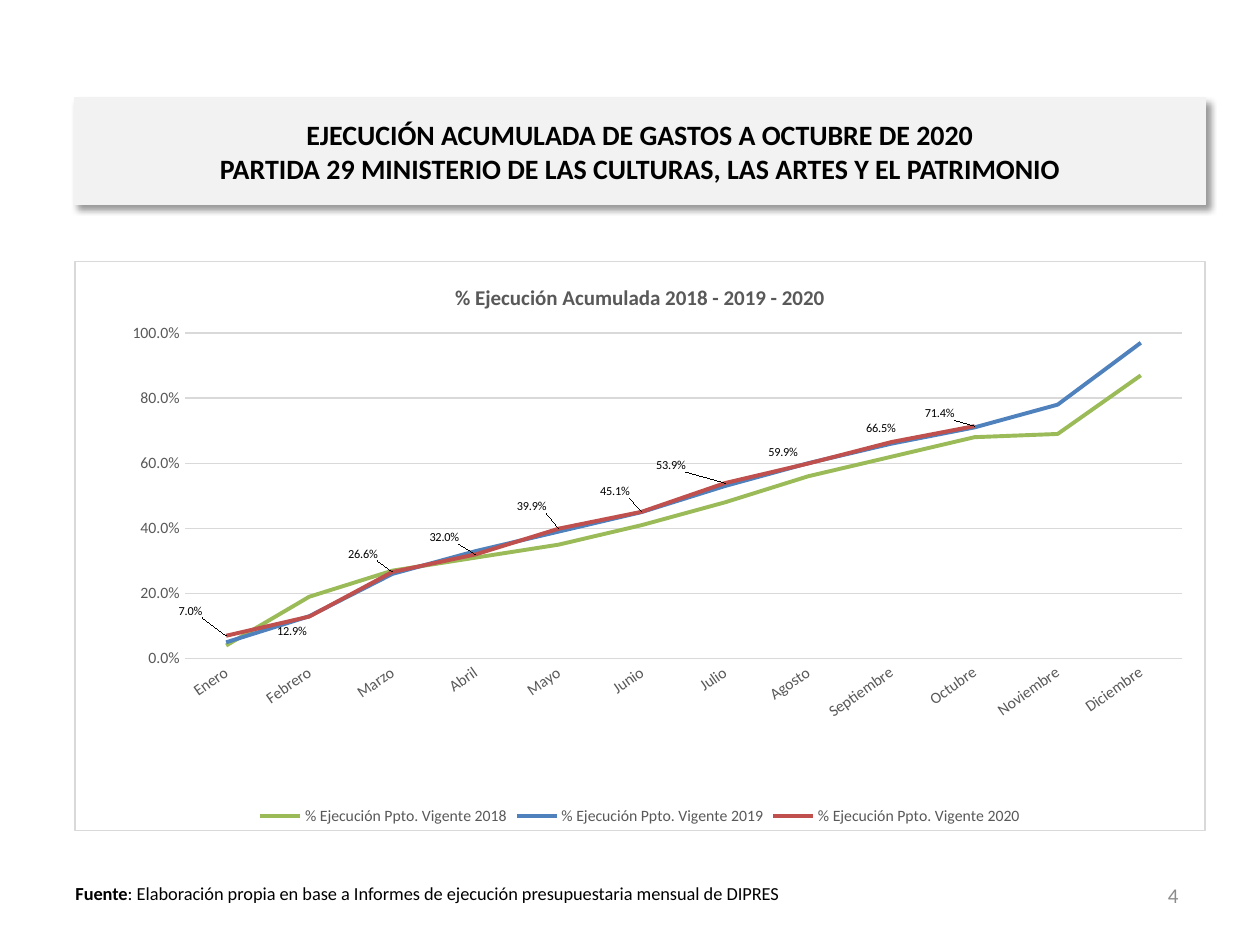
from lxml.etree import SubElement
from pptx import Presentation
from pptx.chart.data import CategoryChartData
from pptx.dml.color import RGBColor
from pptx.enum.chart import XL_CHART_TYPE, XL_LABEL_POSITION, XL_LEGEND_POSITION, XL_TICK_MARK
from pptx.enum.text import MSO_ANCHOR, MSO_AUTO_SIZE, PP_ALIGN
from pptx.oxml import parse_xml
from pptx.oxml.ns import nsdecls, qn
from pptx.util import Pt

TITLE = ("EJECUCIÓN ACUMULADA DE GASTOS A OCTUBRE DE 2020\v"
         "PARTIDA 29 MINISTERIO DE LAS CULTURAS, LAS ARTES Y EL PATRIMONIO")
CHART_TITLE = "% Ejecución Acumulada 2018 - 2019 - 2020"
SOURCE = [("Fuente", True),
          (": Elaboración propia en base a Informes de ejecución presupuestaria mensual de DIPRES", False)]
PAGE = [("4", False)]
MONTHS = ["Enero", "Febrero", "Marzo", "Abril", "Mayo", "Junio", "Julio", "Agosto",
          "Septiembre", "Octubre", "Noviembre", "Diciembre"]
SERIES = [
    ("% Ejecución Ppto. Vigente 2018", "9BBB59",
     [0.04, 0.19, 0.27, 0.31, 0.35, 0.41, 0.48, 0.56, 0.62, 0.68, 0.69, 0.87]),
    ("% Ejecución Ppto. Vigente 2019", "4F81BD",
     [0.05, 0.13, 0.26, 0.33, 0.39, 0.45, 0.53, 0.6, 0.66, 0.71, 0.78, 0.97]),
    ("% Ejecución Ppto. Vigente 2020", "C0504D",
     [0.07, 0.129, 0.266, 0.32, 0.399, 0.451, 0.539, 0.599, 0.665, 0.714, None, None]),
]
LABEL_SHIFTS = [(-20.5, -7.5), (-10, 15), (-17, -3.5), (-18, -3), (-15.5, -6),
                (-15.5, -5), (-31, -3.5), (-14.5, 0.5), (-6, -1), (-20, -0.5)]

THEME = {
    "font": "Calibri",
    "black": "000000", "gray": "595959", "page": "8C8C8C",
    "rule": "D9D9D9", "panel": "F2F2F2", "white": "FFFFFF",
    "title": 16, "chart_title": 12, "source": 10.5, "number": 12,
    "chart": 10, "axis": 9, "label": 7, "line": 2.25,
}
LEFT, WIDTH = 42.5, 646.5
TITLE_BOX = (LEFT, 56, WIDTH, 61)
CHART_BOX = (LEFT, 149, WIDTH, 326)
SOURCE_BOX = (36, 500.5, 425.5, 20)
PAGE_BOX = (512.5, 497, 168, 28.5)
PLOT = {"x": 0.097, "y": 0.126, "w": 0.883, "h": 0.572}


def color(key):
    return RGBColor.from_string(THEME[key])


def style(font, size, ink, bold=None):
    font.name, font.size, font.bold = THEME["font"], Pt(THEME[size]), bold
    font.color.rgb = color(ink)


def add_text(s, box, runs, size, ink, align, anchor):
    tf = s.shapes.add_textbox(*map(Pt, box)).text_frame
    tf.word_wrap = True
    tf.vertical_anchor = anchor
    p = tf.paragraphs[0]
    p.alignment = align
    style(p.font, size, ink)
    for text, bold in runs:
        r = p.add_run()
        r.text, r.font.bold = text, bold


def set_layout(layout, values):
    manual = SubElement(layout, qn("c:manualLayout"))
    for tag, value in values.items():
        SubElement(manual, qn(f"c:{tag}")).set("val", str(value))


def add_title(s):
    sp = s.shapes.title
    sp.left, sp.top, sp.width, sp.height = map(Pt, TITLE_BOX)
    sp.fill.solid()
    sp.fill.fore_color.rgb = color("panel")
    sp.line.color.rgb = color("panel")
    sp.line.width = Pt(0.75)
    sp._element.spPr.append(parse_xml(
        f'<a:effectLst {nsdecls("a")}><a:outerShdw blurRad="{Pt(4)}" dist="{Pt(3)}" '
        'dir="2700000" algn="tl" rotWithShape="0"><a:srgbClr val="000000">'
        '<a:alpha val="40000"/></a:srgbClr></a:outerShdw></a:effectLst>'))
    tf = sp.text_frame
    tf.text = TITLE
    tf.word_wrap = True
    tf.auto_size = MSO_AUTO_SIZE.NONE
    tf.vertical_anchor = MSO_ANCHOR.MIDDLE
    p = tf.paragraphs[0]
    p.alignment = PP_ALIGN.CENTER
    style(p.font, "title", "black", True)


def style_axes(chart):
    cat, val = chart.category_axis, chart.value_axis
    for axis in (cat, val):
        axis.major_tick_mark = axis.minor_tick_mark = XL_TICK_MARK.NONE
        style(axis.tick_labels.font, "axis", "gray")
    cat.format.line.color.rgb = color("rule")
    cat.format.line.width = Pt(1)
    cat._element.find(qn("c:txPr")).find(qn("a:bodyPr")).set("rot", "-2100000")
    val.minimum_scale, val.maximum_scale, val.major_unit = 0, 1, 0.2
    val.tick_labels.number_format = "0.0%"
    val.tick_labels.number_format_is_linked = False
    val.format.line.fill.background()
    val.major_gridlines.format.line.color.rgb = color("rule")
    val.major_gridlines.format.line.width = Pt(0.75)


def add_labels(series):
    labels = series.data_labels
    labels.show_value = True
    labels.number_format = "0.0%"
    labels.number_format_is_linked = False
    labels.position = XL_LABEL_POSITION.ABOVE
    style(labels.font, "label", "black")
    for i in range(len(LABEL_SHIFTS)):
        label = series.points[i].data_label
        style(label.font, "label", "black")
        label.position = XL_LABEL_POSITION.ABOVE
    for node, (dx, dy) in zip(series._element.findall(".//" + qn("c:dLbl")), LABEL_SHIFTS):
        layout = parse_xml(f'<c:layout {nsdecls("c")}/>')
        set_layout(layout, {"x": round(dx / CHART_BOX[2], 4), "y": round(dy / CHART_BOX[3], 4)})
        node.find(qn("c:idx")).addnext(layout)


def add_line_chart(s):
    data = CategoryChartData(number_format="0.0%")
    data.categories = MONTHS
    for name, _, values in SERIES:
        data.add_series(name, values)
    chart = s.shapes.add_chart(XL_CHART_TYPE.LINE, *map(Pt, CHART_BOX), data).chart
    style(chart.font, "chart", "black")
    chart.has_title = True
    p = chart.chart_title.text_frame.paragraphs[0]
    p.text = CHART_TITLE
    style(p.font, "chart_title", "gray", True)
    chart.has_legend = True
    chart.legend.position = XL_LEGEND_POSITION.BOTTOM
    chart.legend.include_in_layout = False
    style(chart.legend.font, "axis", "gray")
    style_axes(chart)
    plot = chart.plots[0]
    plot.vary_by_categories = False
    for series, (_, ink, _) in zip(plot.series, SERIES):
        series.smooth = False
        series.format.line.color.rgb = RGBColor.from_string(ink)
        series.format.line.width = Pt(THEME["line"])
    add_labels(plot.series[-1])
    root = chart._chartSpace
    area = root.find(".//" + qn("c:plotArea"))
    layout = area.find(qn("c:layout"))
    if layout is None:
        layout = parse_xml(f'<c:layout {nsdecls("c")}/>')
        area.insert(0, layout)
    set_layout(layout, {"layoutTarget": "inner", "xMode": "edge", "yMode": "edge", **PLOT})
    root.find(qn("c:chart")).addnext(parse_xml(
        f'<c:spPr {nsdecls("c", "a")}><a:solidFill><a:srgbClr val="{THEME["white"]}"/></a:solidFill>'
        f'<a:ln w="{Pt(0.75)}"><a:solidFill><a:srgbClr val="{THEME["rule"]}"/></a:solidFill></a:ln></c:spPr>'))


def main():
    prs = Presentation()
    prs.slide_width, prs.slide_height = Pt(720), Pt(540)
    s = prs.slides.add_slide(prs.slide_layouts[5])
    add_text(s, SOURCE_BOX, SOURCE, "source", "black", PP_ALIGN.LEFT, MSO_ANCHOR.TOP)
    add_title(s)
    add_text(s, PAGE_BOX, PAGE, "number", "page", PP_ALIGN.RIGHT, MSO_ANCHOR.MIDDLE)
    add_line_chart(s)
    prs.save("out.pptx")


if __name__ == "__main__":
    main()
